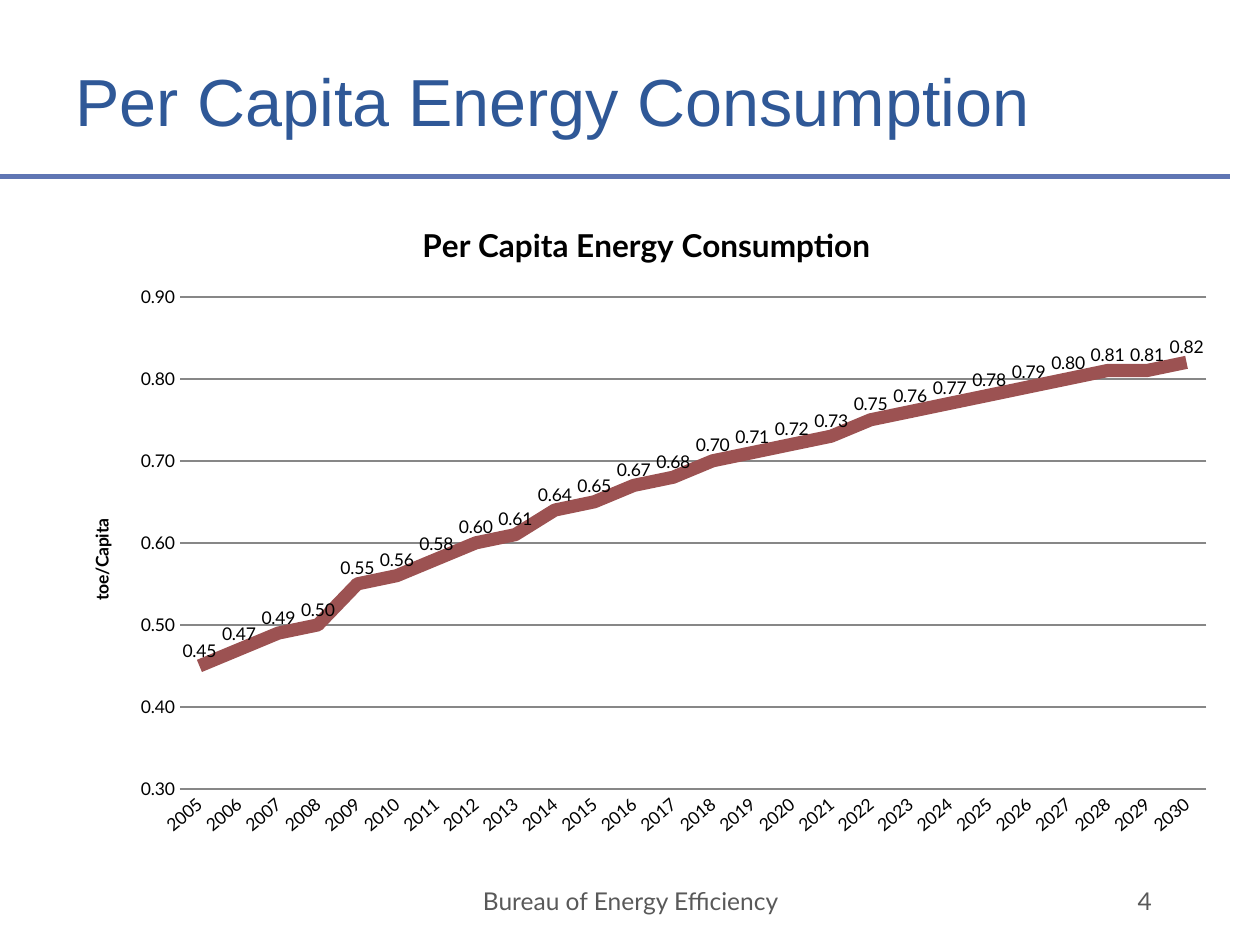
from lxml.etree import SubElement
from pptx import Presentation
from pptx.chart.data import CategoryChartData
from pptx.dml.color import RGBColor
from pptx.enum.chart import XL_CHART_TYPE, XL_LABEL_POSITION, XL_MARKER_STYLE, XL_TICK_MARK
from pptx.enum.shapes import MSO_CONNECTOR
from pptx.enum.text import MSO_ANCHOR, PP_ALIGN
from pptx.oxml import parse_xml
from pptx.oxml.ns import nsdecls, qn
from pptx.util import Cm, Pt

COLORS = {
    "title": "2F5897",
    "rule": "6076B4",
    "footer": "595959",
    "text": "000000",
    "grid": "878787",
    "series": "9C5252",
}
YEARS = range(2005, 2031)
TOE_PER_CAPITA = [
    0.45, 0.47, 0.49, 0.50, 0.55, 0.56, 0.58, 0.60, 0.61, 0.64, 0.65, 0.67, 0.68,
    0.70, 0.71, 0.72, 0.73, 0.75, 0.76, 0.77, 0.78, 0.79, 0.80, 0.81, 0.81, 0.82,
]


def color(name):
    return RGBColor.from_string(COLORS[name])


def style_font(font, size, name, color_name, bold=False):
    font.size = Pt(size)
    font.name = name
    font.bold = bold
    font.color.rgb = color(color_name)


def style_line(line, color_name, width):
    line.color.rgb = color(color_name)
    line.width = Pt(width)


def set_layout(parent, index, inner=False, **fractions):
    """Place a chart part by fractions of the chart's size."""
    for old in parent.findall(qn("c:layout")):
        parent.remove(old)
    layout = parse_xml(f"<c:layout {nsdecls('c')}><c:manualLayout/></c:layout>")
    manual = layout[0]
    if inner:
        SubElement(manual, qn("c:layoutTarget")).set("val", "inner")
    for axis in "xy":
        SubElement(manual, qn(f"c:{axis}Mode")).set("val", "edge")
    for key, value in fractions.items():
        SubElement(manual, qn(f"c:{key}")).set("val", str(value))
    parent.insert(index, layout)


def add_header(slide, left, top, width, height):
    # Title
    title = slide.shapes.title
    title.left, title.top = left + Cm(1.27), top + Cm(0.84)
    title.width, title.height = Cm(20.83), Cm(2.34)
    tf = title.text_frame
    tf.text = "Per Capita Energy Consumption"
    tf.vertical_anchor = MSO_ANCHOR.MIDDLE
    p = tf.paragraphs[0]
    p.alignment = PP_ALIGN.LEFT
    style_font(p.runs[0].font, 38, "Arial", "title")

    # Rule under the title
    bottom = top + height
    rule = slide.shapes.add_connector(MSO_CONNECTOR.STRAIGHT, left, bottom, left + width, bottom)
    style_line(rule.line, "rule", 3)
    SubElement(rule._element.spPr, qn("a:effectLst"))


def add_chart(slide, left, top, width, height):
    data = CategoryChartData(number_format="0.00")
    data.categories = [str(year) for year in YEARS]
    data.add_series("Series 1", TOE_PER_CAPITA)
    chart = slide.shapes.add_chart(XL_CHART_TYPE.LINE, left, top, width, height, data).chart
    chart.has_legend = False
    style_font(chart.font, 10, "Lato", "text")

    # Chart title
    chart.has_title = True
    tf = chart.chart_title.text_frame
    tf.text = "Per Capita Energy Consumption"
    style_font(tf.paragraphs[0].runs[0].font, 18, "Lato", "text", bold=True)

    # Year axis with slanted labels
    years = chart.category_axis
    years.major_tick_mark = years.minor_tick_mark = XL_TICK_MARK.NONE
    style_line(years.format.line, "grid", 1)
    style_font(years.tick_labels.font, 10, "Lato", "text")
    years._element.find(qn("c:txPr")).find(qn("a:bodyPr")).set("rot", "-2400000")

    # Value axis
    values = chart.value_axis
    values.minimum_scale, values.maximum_scale, values.major_unit = 0.3, 0.9, 0.1
    values.major_tick_mark = values.minor_tick_mark = XL_TICK_MARK.NONE
    values.tick_labels.number_format = "0.00"
    values.tick_labels.number_format_is_linked = False
    values.format.line.fill.background()
    style_line(values.major_gridlines.format.line, "grid", 1)
    tf = values.axis_title.text_frame
    tf.text = "toe/Capita"
    tf._txBody.bodyPr.set("rot", "-5400000")
    tf._txBody.bodyPr.set("vert", "horz")
    style_font(tf.paragraphs[0].runs[0].font, 10, "Lato", "text", bold=True)
    set_layout(values.axis_title._element, 1, x=0.02, y=0.49)

    # Series and its labels
    plot = chart.plots[0]
    plot.vary_by_categories = False
    series = plot.series[0]
    series.smooth = False
    series.marker.style = XL_MARKER_STYLE.NONE
    style_line(series.format.line, "series", 7.5)
    labels = series.data_labels
    labels.show_value = True
    labels.position = XL_LABEL_POSITION.ABOVE
    labels.number_format = "0.00"
    labels.number_format_is_linked = False
    style_font(labels.font, 10, "Lato", "text")

    plot_area = chart._chartSpace.chart.plotArea
    set_layout(plot_area, 0, inner=True, x=0.1, y=0.154, w=0.88, h=0.756)


def add_footer(slide, left, top, width, height):
    items = [
        ("Bureau of Energy Efficiency", Cm(8.69), Cm(8.05), PP_ALIGN.CENTER),
        ("4", Cm(18.01), Cm(5.46), PP_ALIGN.RIGHT),
    ]
    for text, offset, item_width, alignment in items:
        tf = slide.shapes.add_textbox(left + offset, top, item_width, height).text_frame
        tf.word_wrap = True
        tf.vertical_anchor = MSO_ANCHOR.MIDDLE
        tf.text = text
        p = tf.paragraphs[0]
        p.alignment = alignment
        style_font(p.runs[0].font, 14, "Lato", "footer")


def main():
    prs = Presentation()
    prs.slide_width, prs.slide_height = Cm(25.4), Cm(19.05)
    slide = prs.slides.add_slide(prs.slide_layouts[5])
    add_header(slide, Cm(0), Cm(0), Cm(24.79), Cm(3.56))
    add_chart(slide, Cm(1.27), Cm(3.96), Cm(23.52), Cm(13.13))
    add_footer(slide, Cm(0), Cm(17.65), prs.slide_width, Cm(1.02))
    prs.save("out.pptx")


if __name__ == "__main__":
    main()
